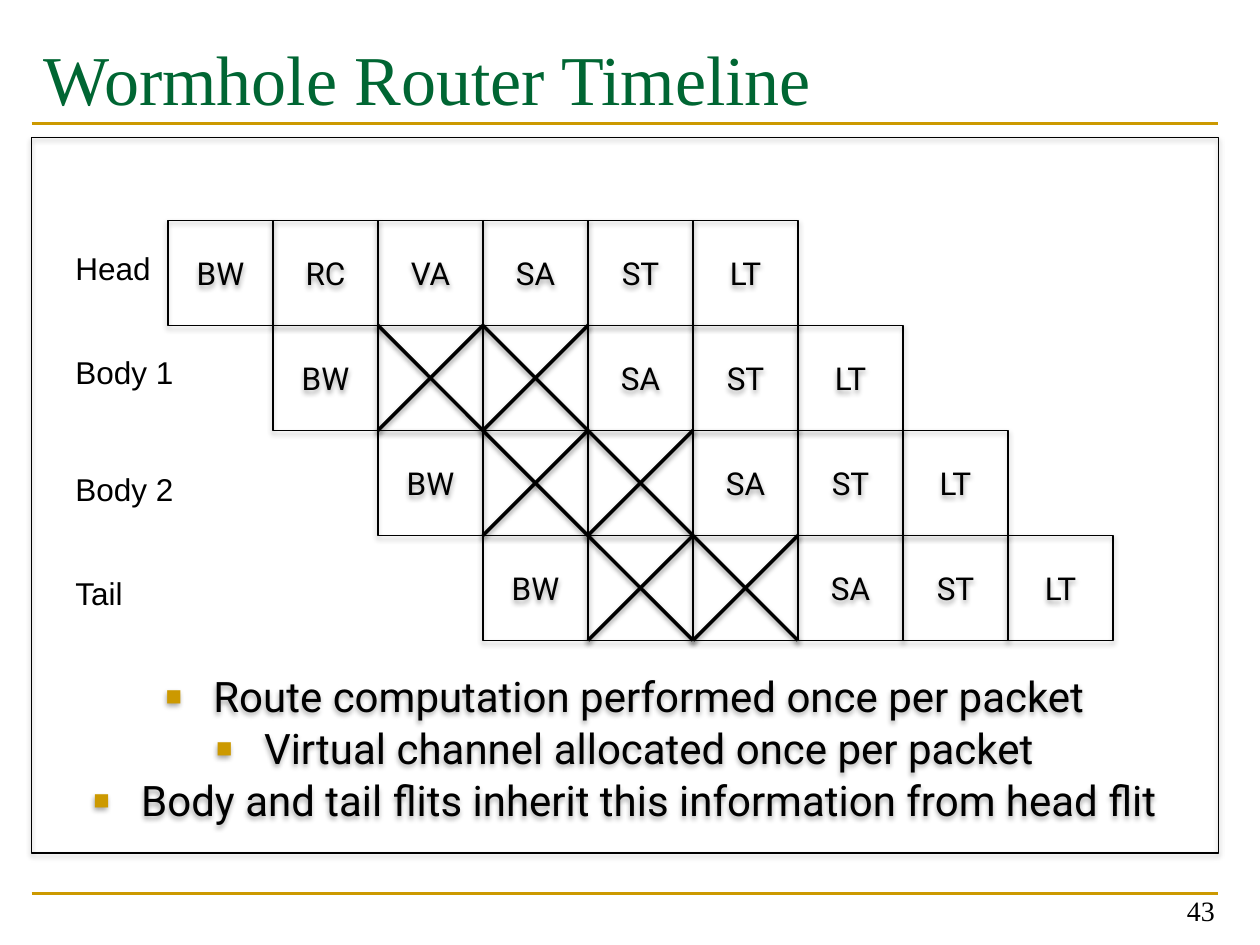
from lxml import etree
from pptx import Presentation
from pptx.dml.color import RGBColor as RGB
from pptx.enum.shapes import MSO_CONNECTOR as LINE, MSO_SHAPE as SHAPE
from pptx.enum.text import MSO_ANCHOR as ANCHOR, PP_ALIGN as ALIGN
from pptx.oxml.ns import qn
from pptx.util import Inches, Pt

HEX = {"gold": "CC9900", "green": "006633", "black": "000000"}
INK = {name: RGB.from_string(code) for name, code in HEX.items()}

deck = Presentation()
deck.slide_width, deck.slide_height = Inches(10), Inches(7.5)
slide = deck.slides.add_slide(deck.slide_layouts[6])
shapes = slide.shapes


def shade(shape, alpha=0, dist=0):
    """Replace the theme shadow: a soft one below, or none if alpha is 0."""
    fx = etree.SubElement(shape._element.spPr, qn("a:effectLst"))
    if alpha:
        drop = etree.SubElement(fx, qn("a:outerShdw"), blurRad=str(Pt(3.1)),
                                dist=str(Pt(dist)), dir="5400000", rotWithShape="0")
        tint = etree.SubElement(drop, qn("a:srgbClr"), val=HEX["black"])
        etree.SubElement(tint, qn("a:alpha"), val=str(alpha * 1000))


def write(shape, text, size, font, color="black", align=ALIGN.LEFT, anchor=ANCHOR.TOP):
    frame = shape.text_frame
    frame.word_wrap = True
    frame.vertical_anchor = anchor
    frame.text = text
    for par in frame.paragraphs:
        par.alignment = align
        for run in par.runs:
            run.font.size = Pt(size)
            run.font.name = font
            run.font.color.rgb = INK[color]
    return frame


# Rules and title
for y in (7.09, 0.98):
    rule = shapes.add_connector(LINE.STRAIGHT, Inches(0.25), Inches(y), Inches(9.67), Inches(y))
    rule.line.color.rgb = INK["gold"]
    rule.line.width = Pt(1.5)
    shade(rule)

title = shapes.add_textbox(Inches(0.25), Inches(0.17), Inches(9.42), Inches(1.17))
write(title, "Wormhole Router Timeline", 40, "Times New Roman", "green").margin_top = Inches(0.11)

# Panel, then the pipeline: each flit starts one cycle later; "X" is an idle stage
side = 2.5 / 3
flits = [("Head", 1.93, "BW RC VA SA ST LT"), ("Body 1", 2.75, "BW X X SA ST LT"),
         ("Body 2", 3.68, "BW X X SA ST LT"), ("Tail", 4.51, "BW X X SA ST LT")]
boxes = [(0.25, 1.09, 9.42, 5.68, "")]
for row, (flit, top, stages) in enumerate(flits):
    for col, stage in enumerate(stages.split()):
        boxes.append((4 / 3 + (row + col) * side, 1.75 + row * side, side, side, stage))

made = []
for x, y, w, h, stage in boxes:
    box = shapes.add_shape(SHAPE.RECTANGLE, Inches(x), Inches(y), Inches(w), Inches(h))
    box.fill.background()
    box.line.color.rgb = INK["black"]
    box.line.width = Pt(0.75)
    shade(box, 35, 1.8)
    made.append(box)
    if stage == "X":
        for start, end in ((x, x + w), (x + w, x)):
            bar = shapes.add_connector(LINE.STRAIGHT, Inches(start), Inches(y + h),
                                       Inches(end), Inches(y))
            bar.line.color.rgb = INK["black"]
            bar.line.width = Pt(2)
            shade(bar, 38, 1.6)
    elif stage:
        write(box, stage, 18, "Roboto", align=ALIGN.CENTER, anchor=ANCHOR.MIDDLE)

# Notes at the foot of the panel
notes = ["Route computation performed once per packet",
         "Virtual channel allocated once per packet",
         "Body and tail flits inherit this information from head flit"]
body = write(made[0], "\n".join(notes), 24, "Roboto", align=ALIGN.CENTER, anchor=ANCHOR.BOTTOM)
body.margin_bottom = Inches(0.22)
for par in body.paragraphs:
    par.space_before = Pt(1)
    props = par._p.get_or_add_pPr()
    props.set("marL", str(Inches(0.38)))
    props.set("indent", str(Inches(-0.38)))
    hue = etree.SubElement(props, qn("a:buClr"))
    etree.SubElement(hue, qn("a:srgbClr"), val=HEX["gold"])
    etree.SubElement(props, qn("a:buSzPct"), val="65000")
    etree.SubElement(props, qn("a:buFont"), typeface="Arial")
    etree.SubElement(props, qn("a:buChar"), char="■")

# Flit labels and page number
for flit, top, stages in flits:
    label = shapes.add_textbox(Inches(0.5), Inches(top), Inches(1), Inches(0.4))
    write(label, flit, 18, "Arial")

page = shapes.add_textbox(Inches(7.41), Inches(6.91), Inches(2.33), Inches(0.5))
write(page, "43", 16, "Times New Roman", align=ALIGN.RIGHT, anchor=ANCHOR.BOTTOM)

deck.save("out.pptx")
